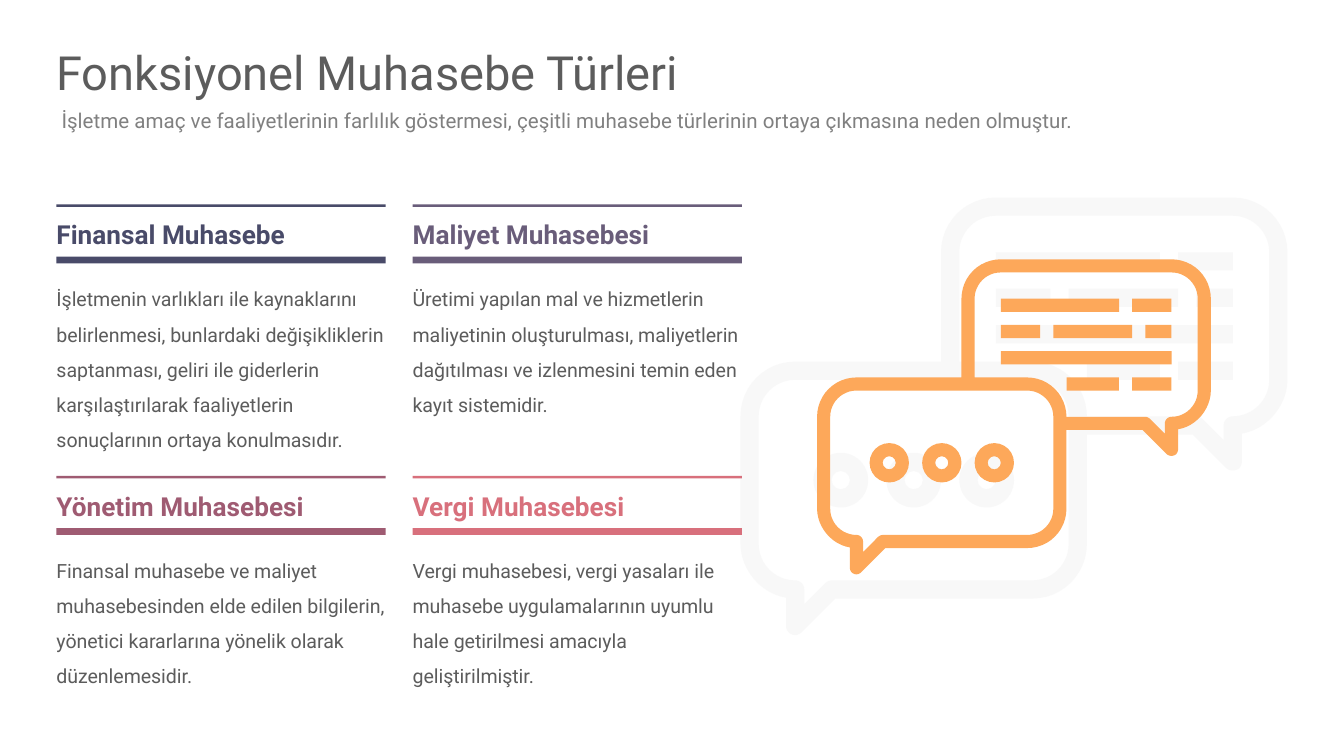
import math
from dataclasses import dataclass

import pptx
import pptx.dml.color
import pptx.enum.shapes
import pptx.enum.text
import pptx.oxml
import pptx.oxml.ns
import pptx.util

Inches = pptx.util.Inches
Pt = pptx.util.Pt
Anchor = pptx.enum.text.MSO_ANCHOR
Preset = pptx.enum.shapes.MSO_SHAPE

FONT = "Roboto"
TEXT = "5C5C5C"
LEFT = 0.42
COLUMN_WIDTH, COLUMN_STEP = 2.45, 2.65
FIRST_ROW, ROW_STEP = 1.52, 2.02


@dataclass
class Topic:
    heading: str
    body: str
    color: str


@dataclass
class Icon:
    left: float
    top: float
    unit: float  # the icon is drawn on a grid of 30 by 24 units
    color: str
    opacity: int = 100


TOPICS = [
    Topic("Finansal Muhasebe",
          "İşletmenin varlıkları ile kaynaklarını belirlenmesi, bunlardaki "
          "değişikliklerin saptanması, geliri ile giderlerin karşılaştırılarak "
          "faaliyetlerin sonuçlarının ortaya konulmasıdır.", "494B69"),
    Topic("Maliyet Muhasebesi",
          "Üretimi yapılan mal ve hizmetlerin maliyetinin oluşturulması, "
          "maliyetlerin dağıtılması ve izlenmesini temin eden kayıt sistemidir.",
          "695D7A"),
    Topic("Yönetim Muhasebesi",
          "Finansal muhasebe ve maliyet muhasebesinden elde edilen bilgilerin, "
          "yönetici kararlarına yönelik olarak düzenlemesidir.", "9F5B72"),
    Topic("Vergi Muhasebesi",
          "Vergi muhasebesi, vergi yasaları ile muhasebe uygulamalarının uyumlu "
          "hale getirilmesi amacıyla geliştirilmiştir.", "D8707C"),
]

ICONS = [
    Icon(5.51, 1.47, 4.07 / 30, "F2F2F2", 50),
    Icon(6.08, 1.93, 2.93 / 30, "FDA85A"),
]

# Contours in icon units: (x, y) is a straight step,
# (corner x, corner y, x, y) a quarter ellipse rounding that corner
BUBBLE_CONTOURS = [
    # Outer edge of both bubbles
    [(27, 0), (14, 0), (11, 0, 11, 3), (11, 9), (3, 9), (0, 9, 0, 12),
     (0, 19), (0, 21.55, 2.5, 21.95), (2.5, 23.5), (2.5, 24, 3, 24),
     (3.2, 24, 3.35, 23.85), (5.2, 22), (16, 22), (19, 22, 19, 19), (19, 13),
     (24.8, 13), (26.65, 14.85), (27, 15.15, 27.35, 14.85),
     (27.5, 14.7, 27.5, 14.5), (27.5, 12.95), (30, 12.55, 30, 10), (30, 3),
     (30, 0, 27, 0)],
    # Inside of the front bubble
    [(18, 19), (18, 21, 16, 21), (5, 21), (4.8, 21, 4.65, 21.15),
     (3.5, 22.3), (3.5, 21.5), (3.5, 21, 3, 21), (1, 21, 1, 19), (1, 12),
     (1, 10, 3, 10), (16, 10), (18, 10, 18, 12)],
    # Inside of the back bubble
    [(29, 10), (29, 12, 27, 12), (26.5, 12, 26.5, 12.5), (26.5, 13.3),
     (25.35, 12.15), (25.2, 12, 25, 12), (19, 12), (19, 9, 16, 9), (12, 9),
     (12, 3), (12, 1, 14, 1), (27, 1), (29, 1, 29, 3)],
]
DOT_COLUMNS = (4, 8, 12)
TEXT_BARS = [(14, 3, 9), (24, 3, 3), (14, 5, 3), (18, 5, 6), (25, 5, 2),
             (14, 7, 13), (19, 9, 4), (24, 9, 3)]  # x, y, width


def rgb(color: str) -> pptx.dml.color.RGBColor:
    return pptx.dml.color.RGBColor.from_string(color)


def paint(shape, color: str, opacity: int = 100) -> None:
    shape.shadow.inherit = False
    shape.line.fill.background()
    shape.fill.solid()
    shape.fill.fore_color.rgb = rgb(color)
    if opacity < 100:
        color_element = shape._element.spPr.find(
            ".//" + pptx.oxml.ns.qn("a:srgbClr"))
        alpha = pptx.oxml.parse_xml(
            f'<a:alpha {pptx.oxml.ns.nsdecls("a")} val="{opacity * 1000}"/>')
        color_element.append(alpha)


def write(shape, text: str, size: float, color: str, bold: bool = False,
          anchor=Anchor.MIDDLE, line_spacing: float = 1.0) -> None:
    frame = shape.text_frame
    frame.word_wrap = True
    frame.auto_size = pptx.enum.text.MSO_AUTO_SIZE.NONE
    frame.vertical_anchor = anchor
    frame.margin_left = frame.margin_right = 0
    frame.margin_top = frame.margin_bottom = 0
    paragraph = frame.paragraphs[0]
    paragraph.alignment = pptx.enum.text.PP_ALIGN.LEFT
    paragraph.line_spacing = line_spacing
    run = paragraph.add_run()
    run.text = text
    run.font.name = FONT
    run.font.size = Pt(size)
    run.font.bold = bold
    run.font.color.rgb = rgb(color)


def flatten(contour: list, steps: int = 12) -> list:
    points = []
    for step in contour:
        if len(step) == 2:
            points.append(step)
            continue
        corner_x, corner_y, end_x, end_y = step
        start_x, start_y = points[-1]
        for index in range(1, steps + 1):
            angle = math.pi / 2 * index / steps
            from_start, from_end = 1 - math.sin(angle), 1 - math.cos(angle)
            points.append((
                corner_x + (start_x - corner_x) * from_start + (end_x - corner_x) * from_end,
                corner_y + (start_y - corner_y) * from_start + (end_y - corner_y) * from_end))
    return points


def draw_icon(slide, icon: Icon) -> None:
    shapes = slide.shapes.add_group_shape().shapes

    def place(x: float, y: float) -> tuple:
        return Inches(icon.left + x * icon.unit), Inches(icon.top + y * icon.unit)

    def add_preset(preset, x: float, y: float, width: float, height: float):
        shape = shapes.add_shape(preset, *place(x, y), Inches(width * icon.unit),
                                 Inches(height * icon.unit))
        paint(shape, icon.color, icon.opacity)
        return shape

    # Speech bubbles
    contours = [[place(*point) for point in flatten(contour)]
                for contour in BUBBLE_CONTOURS]
    builder = shapes.build_freeform(*contours[0][0])
    for number, points in enumerate(contours):
        if number:
            builder.move_to(*points[0])
        builder.add_line_segments(points[1:], close=True)
    paint(builder.convert_to_shape(), icon.color, icon.opacity)

    # Dots and lines of text
    for x in DOT_COLUMNS:
        add_preset(Preset.DONUT, x, 14, 3, 3).adjustments[0] = 1 / 3
    for x, y, width in TEXT_BARS:
        add_preset(Preset.RECTANGLE, x, y, width, 1)


def draw_topic(slide, topic: Topic, left: float, top: float) -> None:
    for offset, height in ((0, 0.02), (0.39, 0.05)):
        rule = slide.shapes.add_shape(Preset.RECTANGLE, Inches(left), Inches(top + offset),
                                      Inches(COLUMN_WIDTH), Inches(height))
        paint(rule, topic.color)
    heading = slide.shapes.add_textbox(Inches(left), Inches(top + 0.06),
                                       Inches(COLUMN_WIDTH), Inches(0.28))
    write(heading, topic.heading, 14, topic.color, bold=True, line_spacing=1.2)
    body = slide.shapes.add_textbox(Inches(left), Inches(top + 0.53),
                                    Inches(COLUMN_WIDTH), Inches(1.33))
    write(body, topic.body, 10.5, TEXT, anchor=Anchor.TOP, line_spacing=1.5)


def main() -> None:
    presentation = pptx.Presentation()
    presentation.slide_width = Inches(10)
    presentation.slide_height = Inches(10 * 9 / 16)
    slide = presentation.slides.add_slide(presentation.slide_layouts[5])

    for icon in ICONS:
        draw_icon(slide, icon)

    # Title and subtitle
    title = slide.shapes.title
    title.left, title.top = Inches(LEFT), Inches(0.31)
    title.width, title.height = Inches(9.15), Inches(0.45)
    write(title, "Fonksiyonel Muhasebe Türleri", 25.2, TEXT)
    subtitle = slide.shapes.add_textbox(Inches(LEFT), Inches(0.8), Inches(9.15), Inches(0.19))
    write(subtitle, " İşletme amaç ve faaliyetlerinin farlılık göstermesi, çeşitli "
          "muhasebe türlerinin ortaya çıkmasına neden olmuştur.", 11, "808080")

    # Two by two grid of topics
    for index, topic in enumerate(TOPICS):
        row, column = divmod(index, 2)
        draw_topic(slide, topic, LEFT + column * COLUMN_STEP, FIRST_ROW + row * ROW_STEP)

    presentation.save("out.pptx")


if __name__ == "__main__":
    main()
